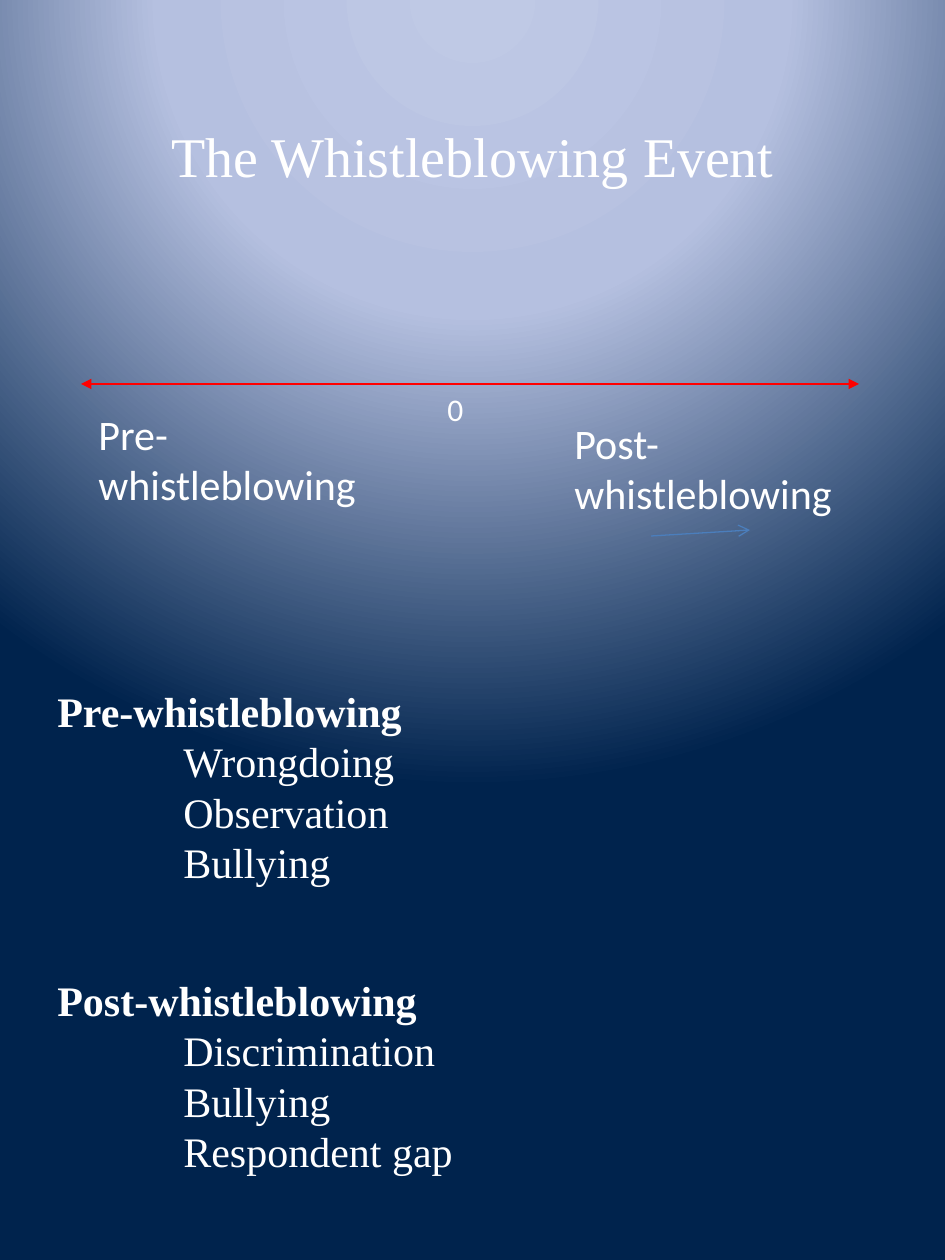
from lxml.etree import SubElement
from pptx import Presentation
from pptx.dml.color import RGBColor
from pptx.enum.shapes import MSO_CONNECTOR as Connector
from pptx.enum.text import MSO_ANCHOR as Anchor, PP_ALIGN as Align
from pptx.oxml.ns import qn
from pptx.util import Emu, Pt

WHITE = RGBColor(0xFF, 0xFF, 0xFF)
RED = RGBColor(0xFF, 0x00, 0x00)
BLUE = RGBColor(0x4B, 0x7E, 0xBC)
GLOW = [(0, RGBColor(0xBF, 0xC9, 0xE5)),
        (40, RGBColor(0xB5, 0xC0, 0xE0)),
        (100, RGBColor(0x00, 0x23, 0x4D))]
GLOW_CENTRE = {"l": 50, "t": -80, "r": 50, "b": 180}
SERIF, SANS = "Times New Roman", "Calibri"

TITLE = "The Whistleblowing Event"
LABELS = [
    ("0", (435, 384, 42, 50), 18, False),
    ("Pre-\nwhistleblowing", (86, 402, 323, 115), 24, True),
    ("Post-\nwhistleblowing", (562, 411, 297, 115), 24, True),
]
PHASES = [
    ("Pre-whistleblowing", ["Wrongdoing", "Observation", "Bullying"]),
    ("Post-whistleblowing", ["Discrimination", "Bullying", "Respondent gap"]),
]
ARROWS = [
    ((651, 536), (750, 530), BLUE, {"tailEnd": "arrow"}),
    ((81, 384), (859, 384), RED, {"headEnd": "triangle", "tailEnd": "triangle"}),
]
PHASE_INDENT, PHASE_GAP, PHASE_LINE = 126, 50, 28.8


def px(length):
    return Emu(length * 914400 // 126)


def add_text(slide, text, box, size=24, font=SERIF, align=Align.LEFT,
             anchor=Anchor.TOP, wrap=True):
    frame = slide.shapes.add_textbox(*map(px, box)).text_frame
    frame.word_wrap = wrap
    frame.vertical_anchor = anchor
    frame.text = text
    for paragraph in frame.paragraphs:
        paragraph.alignment = align
        for run in paragraph.runs:
            run.font.name = font
            run.font.size = Pt(size)
            run.font.color.rgb = WHITE
    return frame


def add_arrow(slide, start, end, color, heads):
    arrow = slide.shapes.add_connector(Connector.STRAIGHT, *map(px, start + end))
    arrow.line.color.rgb = color
    arrow.line.width = Pt(0.75)
    line = arrow.line._get_or_add_ln()
    for tag, kind in heads.items():
        SubElement(line, qn(f"a:{tag}"), type=kind)
    SubElement(arrow._element.spPr, qn("a:effectLst"))


def paint_background(slide):
    fill = slide.background.fill
    fill.gradient()
    gradient = slide._element.find(".//" + qn("a:gradFill"))
    for child in list(gradient):
        gradient.remove(child)
    stops = SubElement(gradient, qn("a:gsLst"))
    for position, color in GLOW:
        stop = SubElement(stops, qn("a:gs"), pos=str(position * 1000))
        SubElement(stop, qn("a:srgbClr"), val=str(color))
    circle = SubElement(gradient, qn("a:path"), path="circle")
    SubElement(circle, qn("a:fillToRect"),
               {side: str(value * 1000) for side, value in GLOW_CENTRE.items()})


def add_phases(slide):
    lines = [line for heading, items in PHASES for line in [heading, *items]]
    headings = [heading for heading, _ in PHASES]
    frame = add_text(slide, "\n".join(lines), (45, 679, 843, 599))
    for index, paragraph in enumerate(frame.paragraphs):
        paragraph.line_spacing = Pt(PHASE_LINE)
        if paragraph.text in headings:
            paragraph.font.bold = True
            paragraph.runs[0].font.bold = True
            paragraph.space_before = Pt(PHASE_GAP if index else 0)
        else:
            properties = paragraph._p.get_or_add_pPr()
            properties.set("marL", str(px(PHASE_INDENT)))
            properties.set("indent", "0")


def main():
    presentation = Presentation()
    presentation.slide_width, presentation.slide_height = px(945), px(1260)
    slide = presentation.slides.add_slide(presentation.slide_layouts[6])
    paint_background(slide)
    add_text(slide, TITLE, (48, 50, 850, 210), size=32,
             align=Align.CENTER, anchor=Anchor.MIDDLE)
    for arrow in ARROWS:
        add_arrow(slide, *arrow)
    for text, box, size, wrap in LABELS:
        add_text(slide, text, box, size=size, font=SANS, wrap=wrap)
    add_phases(slide)
    presentation.save("out.pptx")


if __name__ == "__main__":
    main()
